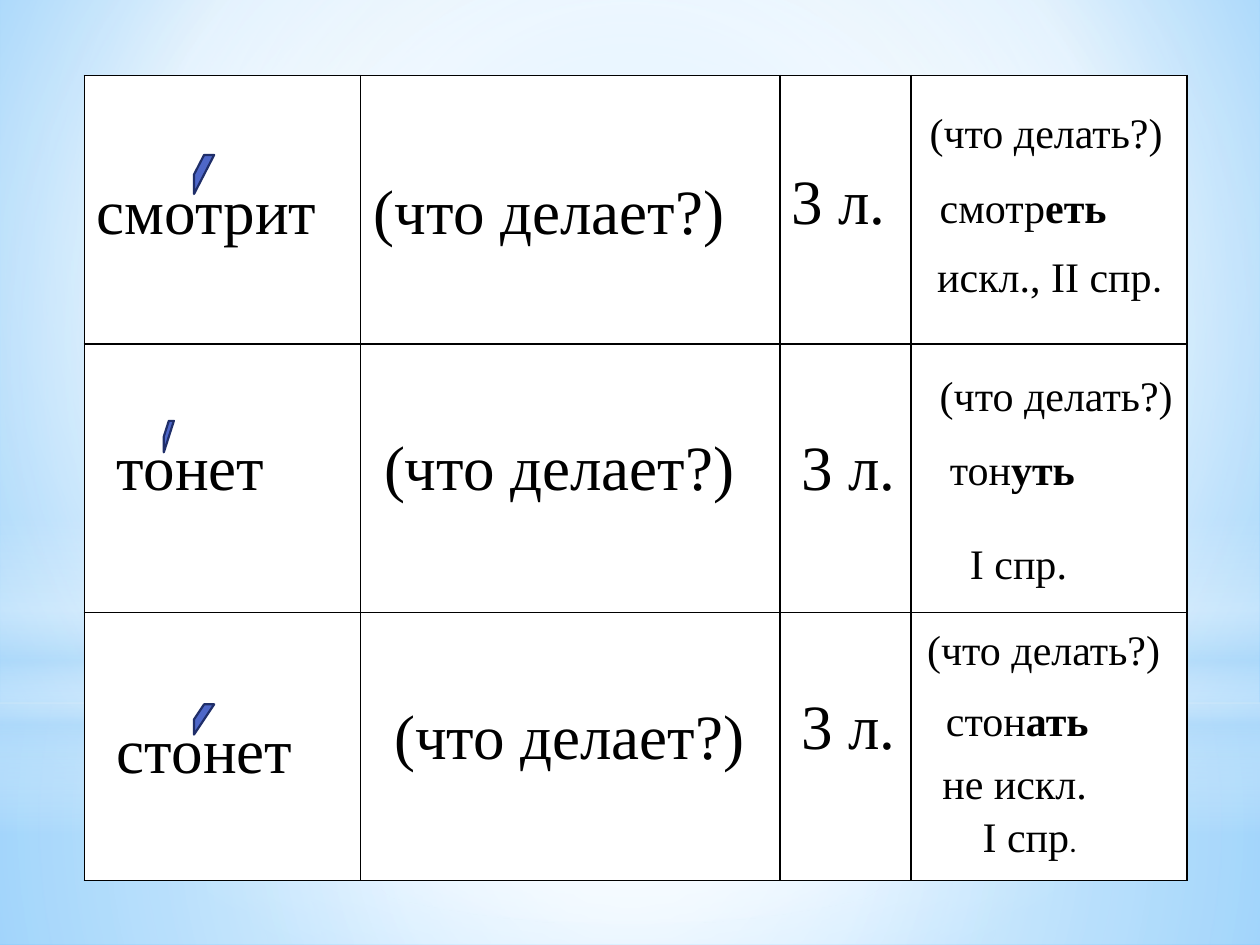
from lxml.etree import SubElement as Sub
from pptx import Presentation
from pptx.dml.color import RGBColor
from pptx.enum.shapes import MSO_SHAPE as Shape
from pptx.enum.text import MSO_AUTO_SIZE as Auto
from pptx.oxml.ns import qn
from pptx.util import Inches, Pt

SERIF = "Times New Roman"
rgb = RGBColor.from_string


def blend(fill, node, stops, rect=None):
    fill.gradient()
    grad = next(node.iter(qn("a:gradFill")))
    for child in list(grad):
        grad.remove(child)
    grad.set("rotWithShape", "1")
    group = Sub(grad, qn("a:gsLst"))
    for place, color, alpha in stops:
        stop = Sub(group, qn("a:gs"), pos=str(place * 1000))
        tint = Sub(stop, qn("a:srgbClr"), val=color)
        if alpha < 100:
            Sub(tint, qn("a:alpha"), val=str(alpha * 1000))
    if rect:
        path = Sub(grad, qn("a:path"), {"path": "circle"})
        sides = {side: str(val * 1000) for side, val in zip("ltrb", rect)}
        Sub(path, qn("a:fillToRect"), sides)
    else:
        Sub(grad, qn("a:lin"), ang="5400000", scaled="0")


def write(left, top, width, size, *parts):
    box = slide.shapes.add_textbox(
        Inches(left), Inches(top), Inches(width), Inches(0.71 if size == 36 else 0.5))
    frame = box.text_frame
    frame.word_wrap = True
    frame.auto_size = Auto.SHAPE_TO_FIT_TEXT
    for text, bold, face, points in parts:
        run = frame.paragraphs[0].add_run()
        run.text = text
        run.font.size = Pt(points or size)
        run.font.name = face
        run.font.bold = bold
        run.font.color.rgb = rgb("000000")


deck = Presentation()
deck.slide_width, deck.slide_height = Inches(10), Inches(7.5)
slide = deck.slides.add_slide(deck.slide_layouts[6])

back = [(0, "9ED5FF", 100), (60, "FFFFFF", 100), (100, "5BB9FF", 100)]
blend(slide.background.fill, slide.element, back, (20, 10, 20, 60))

mid = (50, 50, 50, 50)
glows = [
    (Shape.RECTANGLE, 5.58, 1.92, mid,
     [(0, "FFFFFF", 91), (37, "FFFFFF", 76), (100, "B4DCFA", 79)]),
    (Shape.RECTANGLE, 0, 5.58, mid,
     [(0, "FFFFFF", 89), (48, "FFFFFF", 62), (100, "B4DCFA", 79)]),
    (Shape.RECTANGLE, 4.12, 2.5, None,
     [(0, "FFFFFF", 0), (29, "FFFFFF", 30), (45, "B4DCFA", 40),
      (55, "FFFFFF", 26), (65, "B4DCFA", 60), (100, "FFFFFF", 0)]),
    (Shape.OVAL, 1.75, 5.58, mid, [(0, "FFFFFF", 100), (56, "FFFFFF", 0)]),
]
for kind, top, height, rect, stops in glows:
    glow = slide.shapes.add_shape(kind, 0, Inches(top), Inches(10), Inches(height))
    glow.shadow.inherit = False
    glow.line.fill.background()
    blend(glow.fill, glow.element, stops, rect)

table = slide.shapes.add_table(
    3, 4, Inches(0.67), Inches(0.6), Inches(8.74), Inches(6.38)).table
for col, width in zip(table.columns, (2.19, 3.33, 1.04, 2.19)):
    col.width = Inches(width)
for row in table.rows:
    row.height = Inches(2.13)
    for cell in row.cells:
        cell.fill.solid()
        cell.fill.fore_color.rgb = rgb("FFFFFF")
        props = cell._tc.get_or_add_tcPr()
        for spot, side in enumerate("LRTB"):
            edge = Sub(props, qn("a:ln" + side), w="12700")
            Sub(Sub(edge, qn("a:solidFill")), qn("a:srgbClr"), val="000000")
            props.insert(spot, edge)

large = [
    (0.67, 1.31, 2.05, "смотрит"),
    (2.87, 1.31, 3.23, "(что делает?)"),
    (6.18, 1.23, 1.26, "3 л."),
    (0.83, 3.34, 1.73, "тонет"),
    (2.95, 3.34, 3.07, "(что делает?)"),
    (6.26, 3.34, 1.02, "3 л."),
    (0.83, 5.59, 1.73, "стонет"),
    (3.03, 5.48, 3.07, "(что делает?)"),
    (6.26, 5.4, 1.18, "3 л."),
]
for left, top, width, text in large:
    write(left, top, width, 36, (text, False, SERIF, None))

small = [
    (7.28, 0.8, 2.36, "(что делать?)", ""),
    (7.36, 1.39, 1.97, "смотр", "еть"),
    (7.36, 2.88, 2.28, "(что делать?)", ""),
    (7.44, 3.47, 1.73, "тон", "уть"),
    (7.6, 4.22, 1.26, "I cпр.", ""),
    (7.26, 4.9, 2.36, "(что делать?)", ""),
    (7.41, 5.46, 2, "стон", "ать"),
    (7.38, 5.96, 1.89, "не искл.", ""),
]
for left, top, width, stem, end in small:
    parts = [(stem, False, SERIF, None)]
    if end:
        parts.append((end, True, SERIF, None))
    write(left, top, width, 24, *parts)

for left, top, width, text, points in [
        (7.34, 1.94, 2.2, "искл., II спр", 24), (7.7, 6.38, 1.6, "I спр", 18)]:
    write(left, top, width, 24,
          (text, False, SERIF, None), (".", False, "Roboto", points))

for left, top, width, height in [
        (1.54, 1.23, 0.16, 0.31), (1.3, 3.34, 0.08, 0.25), (1.54, 5.59, 0.16, 0.24)]:
    mark = slide.shapes.add_shape(
        Shape.DIAGONAL_STRIPE, Inches(left), Inches(top), Inches(width), Inches(height))
    mark.shadow.inherit = False
    mark.fill.solid()
    mark.fill.fore_color.rgb = rgb("4E67C8")
    mark.line.color.rgb = rgb("1F2E69")
    mark.line.width = Pt(1.25)

deck.save("out.pptx")
